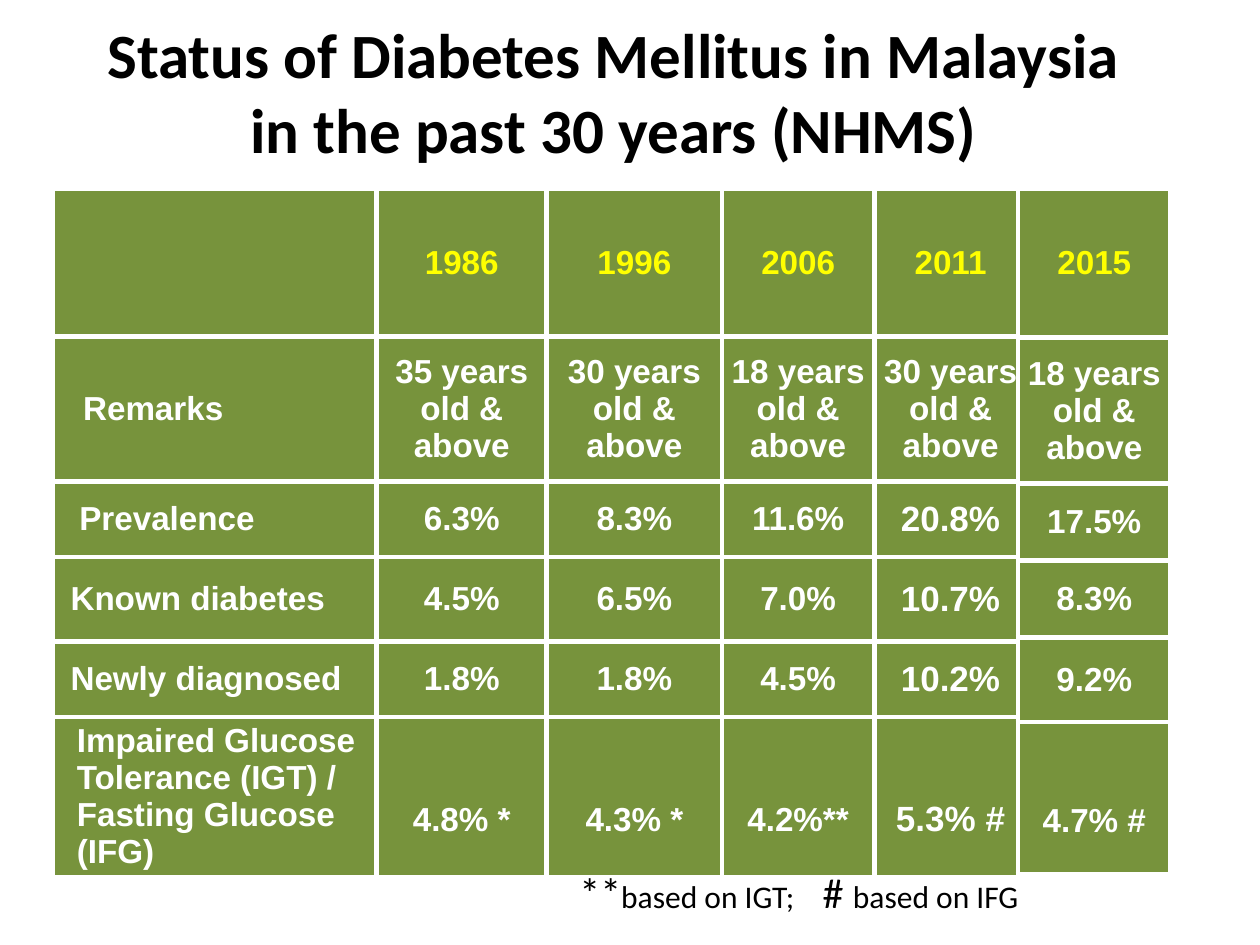
from lxml import etree
from pptx import Presentation
from pptx import util as u
from pptx.dml import color
from pptx.enum import text
from pptx.oxml import ns

COLORS = {"cell": "77933C", "border": "FFFFFF", "year": "FFFF00",
          "body": "FFFFFF", "ink": "000000"}

HEADER = ["", "1986", "1996", "2006", "2011"]
ROWS = [
    ["Remarks"] + [f"{age} years old & above" for age in (35, 30, 18, 30)],
    ["Prevalence", "6.3%", "8.3%", "11.6%", "20.8%"],
    ["Known diabetes", "4.5%", "6.5%", "7.0%", "10.7%"],
    ["Newly diagnosed", "1.8%", "1.8%", "4.5%", "10.2%"],
    ["Impaired Glucose Tolerance (IGT) / Fasting Glucose (IFG)",
     "4.8% *", "4.3% *", "4.2%**", "5.3% #"],
]
LATEST = [["2015"], ["18 years old & above"], ["17.5%"], ["8.3%"], ["9.2%"], ["4.7% #"]]
LABEL_INDENTS = [0, 0.24, 0.21, 0.14, 0.14, 0.19]
RESULT_DROP = 0.36  # the last row's values sit below the middle


def rgb(name):
    return color.RGBColor.from_string(COLORS[name])


def write(paragraph, content, font="Arial", size=19, ink="ink", bold=False, align=None):
    run = paragraph.add_run()
    run.text = content
    run.font.name = font
    run.font.size = u.Pt(size)
    run.font.bold = bold
    run.font.color.rgb = rgb(ink)
    if align is not None:
        paragraph.alignment = align


def set_borders(cell, width=3):
    properties = cell._tc.get_or_add_tcPr()
    for position, side in enumerate(("lnL", "lnR", "lnT", "lnB")):
        line = etree.Element(ns.qn(f"a:{side}"), w=str(u.Pt(width)))
        fill = etree.SubElement(line, ns.qn("a:solidFill"))
        etree.SubElement(fill, ns.qn("a:srgbClr"), val=COLORS["border"])
        properties.insert(position, line)


def add_title(slide, left, top, width, height):
    title = slide.shapes.title
    title.left, title.top, title.width, title.height = map(u.Inches, (left, top, width, height))
    frame = title.text_frame
    frame.word_wrap = True
    frame.vertical_anchor = text.MSO_ANCHOR.MIDDLE
    write(frame.paragraphs[0],
          "Status of Diabetes Mellitus in Malaysia in the past 30 years (NHMS)",
          font="Calibri", size=36, bold=True, align=text.PP_ALIGN.CENTER)


def add_survey_table(slide, left, top, widths, heights, rows, labels=False, large_column=None):
    """Add a bordered table; labels marks a left-aligned first column."""
    table = slide.shapes.add_table(
        len(heights), len(widths), u.Inches(left), u.Inches(top),
        u.Inches(sum(widths)), u.Inches(sum(heights))).table
    for column, width in zip(table.columns, widths):
        column.width = u.Inches(width)
    for r, (height, values) in enumerate(zip(heights, rows)):
        table.rows[r].height = u.Inches(height)
        for c, value in enumerate(values):
            cell = table.cell(r, c)
            is_label = labels and c == 0
            cell.fill.solid()
            cell.fill.fore_color.rgb = rgb("cell")
            set_borders(cell)
            cell.vertical_anchor = text.MSO_ANCHOR.MIDDLE
            cell.margin_right = cell.margin_bottom = 0
            cell.margin_left = u.Inches(LABEL_INDENTS[r] if is_label else 0)
            drop = r == len(rows) - 1 and not is_label
            cell.margin_top = u.Inches(RESULT_DROP if drop else 0)
            if value:
                write(cell.text_frame.paragraphs[0], value, bold=True,
                      size=20 if c == large_column and r > 1 else 19,
                      ink="body" if r else "year",
                      align=text.PP_ALIGN.LEFT if is_label else text.PP_ALIGN.CENTER)


def add_footnote(slide, left, top, width, height):
    frame = slide.shapes.add_textbox(*map(u.Inches, (left, top, width, height))).text_frame
    frame.word_wrap = True
    paragraph = frame.paragraphs[0]
    tabs = etree.SubElement(paragraph._p.get_or_add_pPr(), ns.qn("a:tabLst"))
    etree.SubElement(tabs, ns.qn("a:tab"), pos=str(u.Inches(1.93)), algn="l")
    for content, size in (("**", 24), ("based on IGT;\t", 18), ("# ", 24), ("based on IFG", 18)):
        write(paragraph, content, font="Calibri", size=size)


def main():
    presentation = Presentation()
    presentation.slide_width, presentation.slide_height = u.Inches(10), u.Inches(7.5)
    slide = presentation.slides.add_slide(presentation.slide_layouts[5])
    add_title(slide, 0.58, 0, 8.58, 1.44)
    add_survey_table(slide, 0.42, 1.5, [2.57, 1.35, 1.39, 1.21, 1.21],
                     [1.17, 1.15, 0.6, 0.67, 0.6, 1.27], [HEADER] + ROWS,
                     labels=True, large_column=4)
    add_footnote(slide, 4.5, 6.83, 5.08, 0.5)
    add_survey_table(slide, 8.08, 1.5, [1.21],
                     [1.18, 1.16, 0.61, 0.61, 0.67, 1.21], LATEST)
    presentation.save("out.pptx")


if __name__ == "__main__":
    main()
